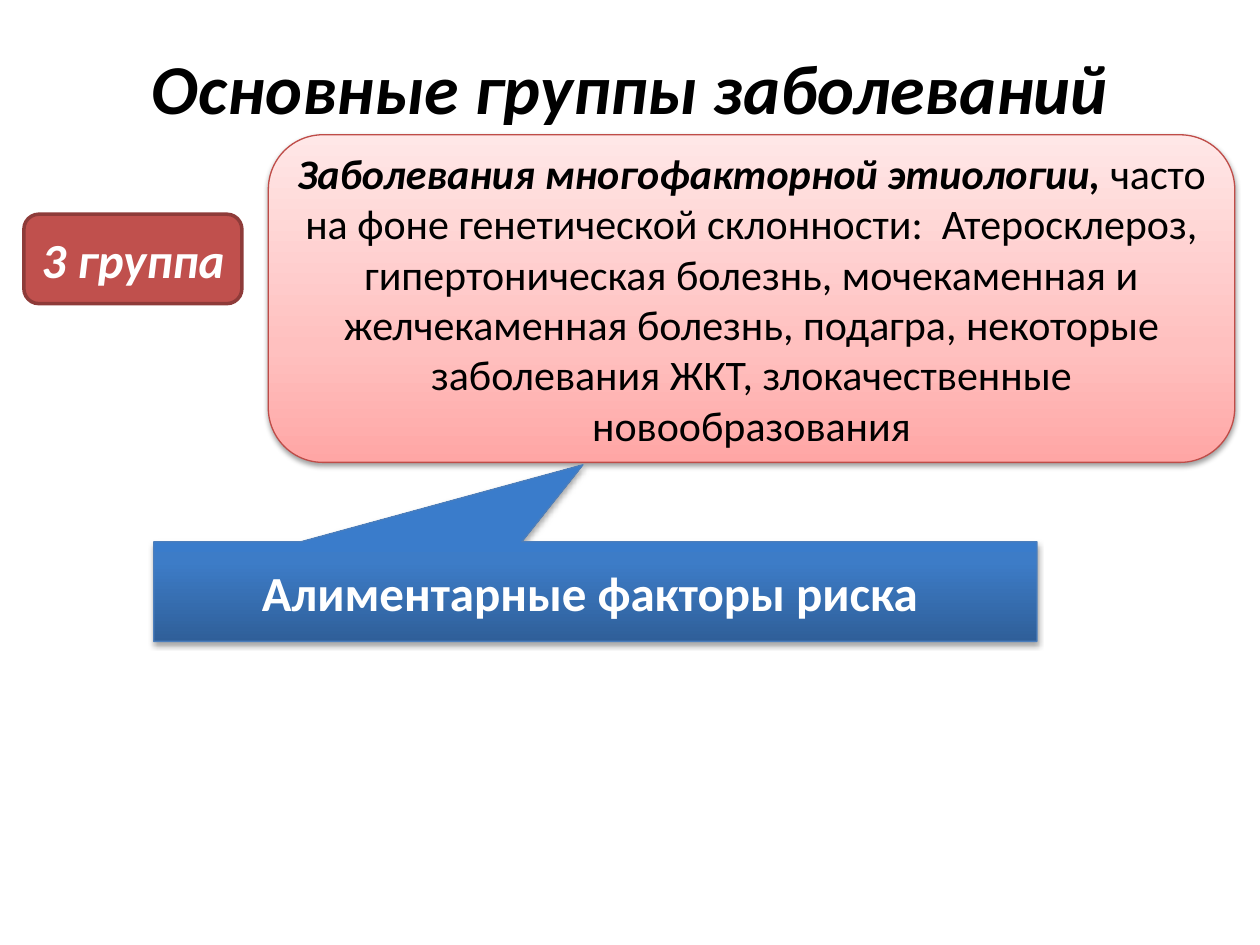
import pptx
import pptx.util
import pptx.dml.color
import pptx.enum.shapes
import pptx.enum.text
import pptx.oxml.ns
from lxml import etree

SHAPE = pptx.enum.shapes.MSO_SHAPE
Inches, Pt = pptx.util.Inches, pptx.util.Pt
RGB = pptx.dml.color.RGBColor.from_string

THEME = dict(
    font="Calibri", title_size=40, label_size=28, body_size=24,
    dark="000000", light="FFFFFF",
    red="C0504D", red_edge="8E3B39", pink_edge="BF4C48", blue_edge="4B7EBC",
    # gradient stops run from bottom to top: (percent, colour)
    pink=[(0, "FFA6A5"), (35, "FFC0BF"), (100, "FFE7E7")],
    blue=[(0, "2F5F99"), (80, "3D7CC7"), (100, "3A7CCB")],
)

# Content: runs are (text, bold, italic)
TITLE = [("Основные группы заболеваний", True, True)]
GROUP = [("3 группа", True, True)]
DISEASES = [
    ("Заболевания многофакторной этиологии,", True, True),
    (" часто на фоне генетической склонности:  Атеросклероз, "
     "гипертоническая болезнь, мочекаменная и желчекаменная болезнь, "
     "подагра, некоторые заболевания ЖКТ, злокачественные "
     "новообразования", False, False),
]
RISKS = [("Алиментарные факторы риска ", True, False)]

# Boxes: preset, place, runs, size, text colour, fill, edge, edge width, shadow
# A shadow is (opacity in percent, distance in points)
BOXES = [
    (SHAPE.ROUNDED_RECTANGLE, (0.19, 1.7, 1.73, 0.71), GROUP, "label_size",
     "light", "red", "red_edge", 2, None),
    (SHAPE.ROUNDED_RECTANGLE, (2.13, 1.07, 7.67, 2.6), DISEASES, "body_size",
     "dark", "pink", "pink_edge", 0.75, (38, 1.6)),
    (SHAPE.RECTANGULAR_CALLOUT, (1.22, 4.3, 7.01, 0.79), RISKS, "label_size",
     "light", "blue", "blue_edge", 0.75, (35, 1.8)),
]
CALLOUT_TIP = (-0.014, -1.274)
SHADOW_BLUR = 3.1


def add_child(parent, tag, **attrs):
    return etree.SubElement(parent, pptx.oxml.ns.qn(tag),
                            {k: str(v) for k, v in attrs.items()})


def add_colour(parent, colour):
    return add_child(parent, "a:srgbClr", val=colour)


def write(s, runs, size, colour):
    tf = s.text_frame
    tf.word_wrap = True
    tf.vertical_anchor = pptx.enum.text.MSO_ANCHOR.MIDDLE
    p = tf.paragraphs[0]
    p.alignment = pptx.enum.text.PP_ALIGN.CENTER
    for text, bold, italic in runs:
        r = p.add_run()
        r.text = text
        r.font.name, r.font.size = THEME["font"], Pt(THEME[size])
        r.font.bold, r.font.italic = bold, italic
        r.font.color.rgb = RGB(THEME[colour])


def paint(s, fill):
    if isinstance(fill, str):
        s.fill.solid()
        s.fill.fore_color.rgb = RGB(fill)
        return
    s.fill.gradient()
    s.fill.gradient_angle = 90
    stops = s.element.spPr.find(".//" + pptx.oxml.ns.qn("a:gsLst"))
    for stop in list(stops):
        stops.remove(stop)
    for percent, colour in fill:
        add_colour(add_child(stops, "a:gs", pos=percent * 1000), colour)


def cast_shadow(s, opacity, distance):
    effects = s.element.spPr.find(pptx.oxml.ns.qn("a:effectLst"))
    outer = add_child(effects, "a:outerShdw", blurRad=Pt(SHADOW_BLUR),
                      dist=Pt(distance), dir=90 * 60000, rotWithShape=0)
    add_child(add_colour(outer, THEME["dark"]), "a:alpha", val=opacity * 1000)


def main():
    prs = pptx.Presentation()
    prs.slide_width, prs.slide_height = Inches(10), Inches(7.5)
    slide = prs.slides.add_slide(prs.slide_layouts[6])

    # Title
    title = slide.shapes.add_textbox(*map(Inches, (0.5, 0.3, 9, 0.77)))
    write(title, TITLE, "title_size", "dark")

    # Group label, disease list and risk callout
    for preset, place, runs, size, colour, fill, edge, width, shadow in BOXES:
        s = slide.shapes.add_shape(preset, *map(Inches, place))
        if preset == SHAPE.RECTANGULAR_CALLOUT:
            s.adjustments[0], s.adjustments[1] = CALLOUT_TIP
        paint(s, THEME[fill])
        s.line.color.rgb = RGB(THEME[edge])
        s.line.width = Pt(width)
        s.shadow.inherit = False
        if shadow:
            cast_shadow(s, *shadow)
        write(s, runs, size, colour)

    prs.save("out.pptx")


if __name__ == "__main__":
    main()
